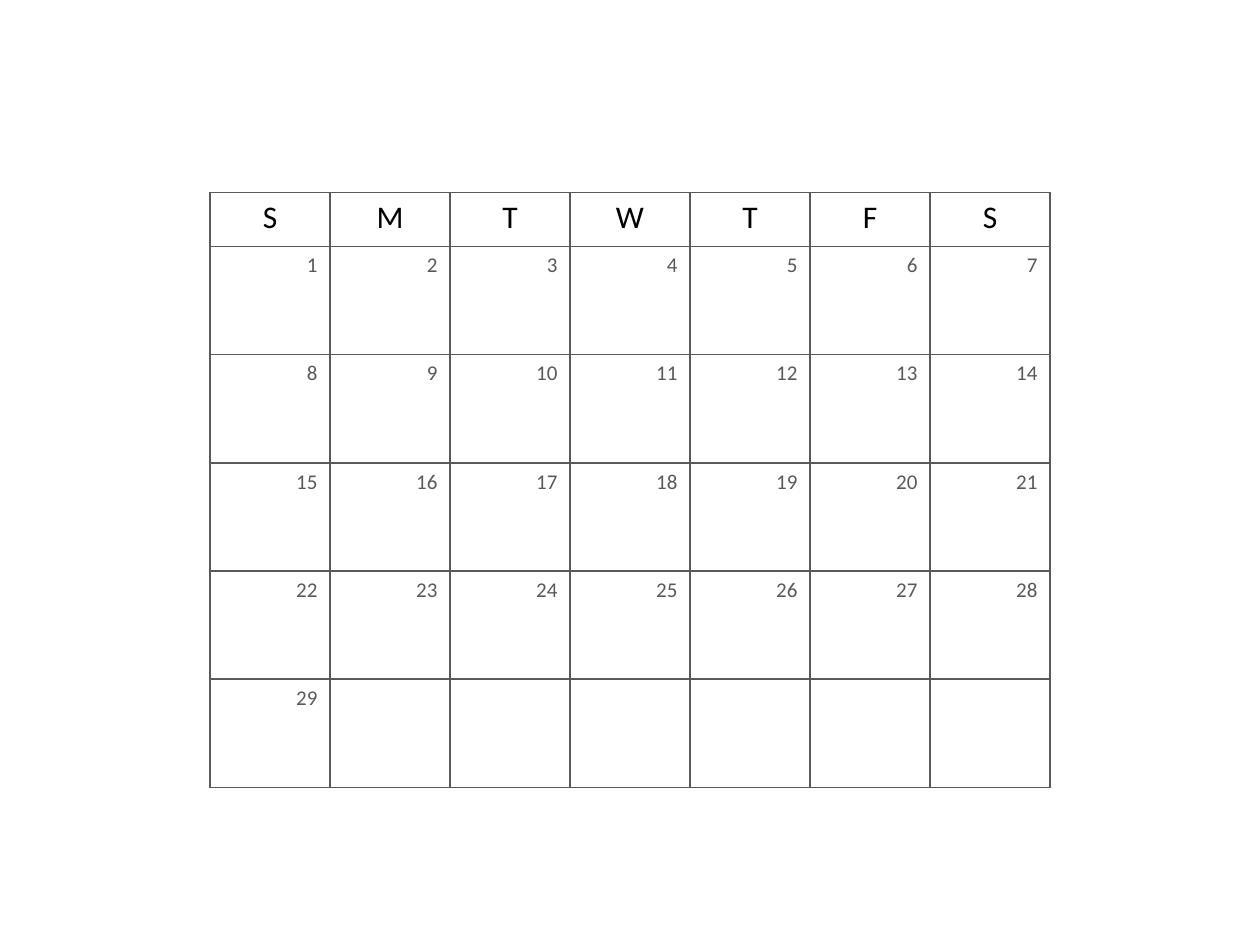
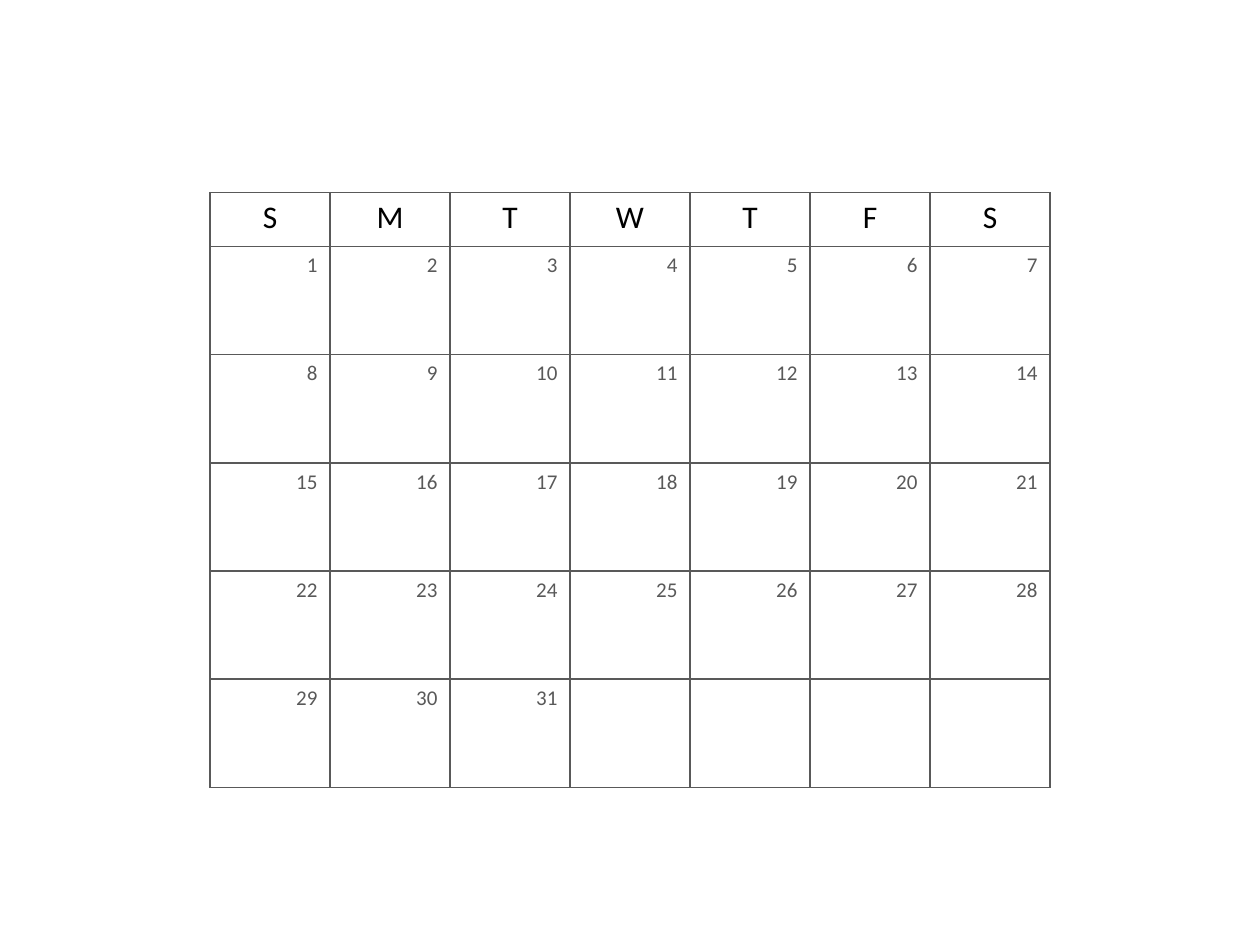
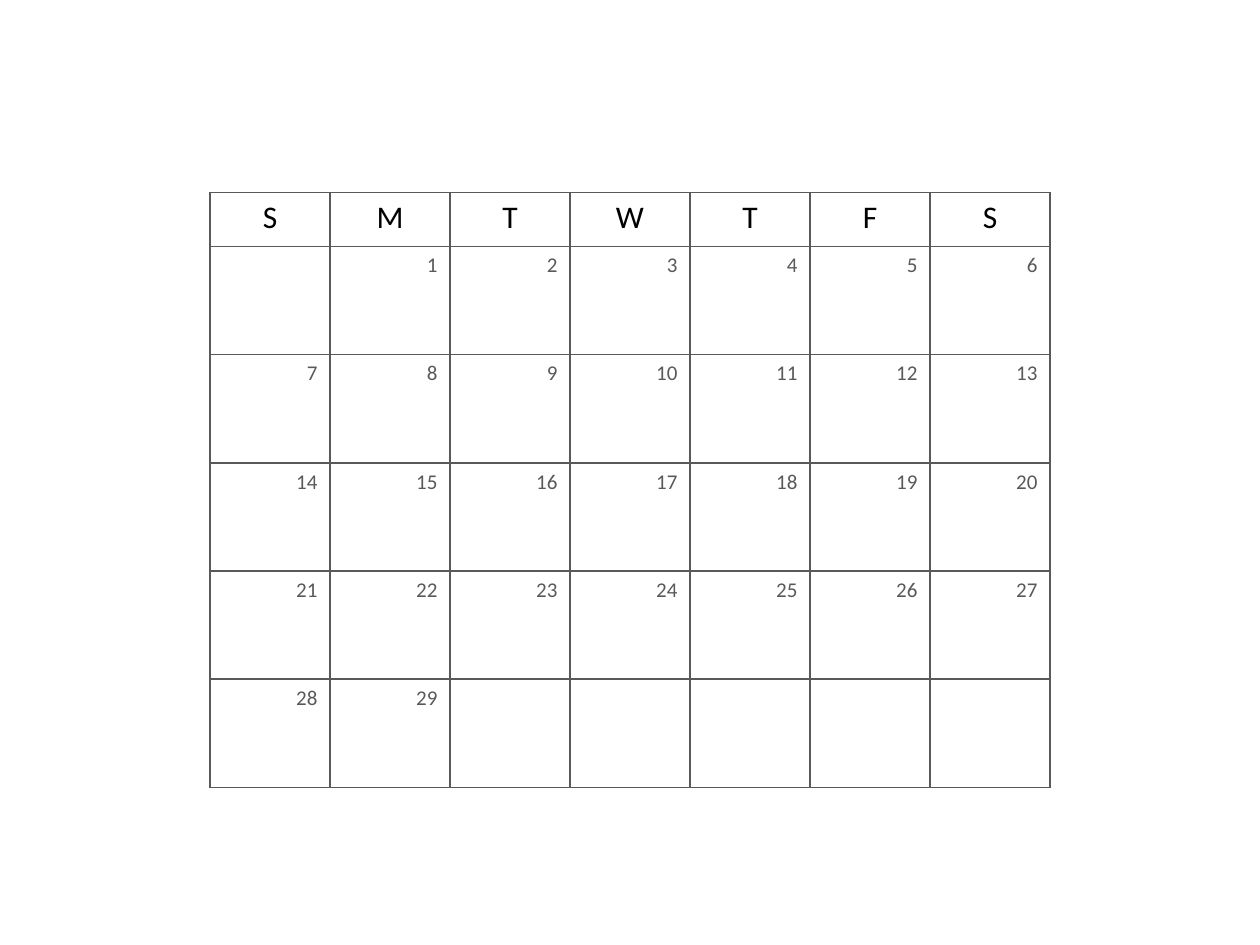
from lxml import etree
from pptx import Presentation
from pptx.dml.color import RGBColor
from pptx.enum.text import MSO_ANCHOR, PP_ALIGN
from pptx.oxml.ns import qn
from pptx.util import Pt

CENTER, RIGHT = PP_ALIGN.CENTER, PP_ALIGN.RIGHT
TOP = MSO_ANCHOR.TOP

# Shared style
FONT = "Calibri"
BLACK, GRAY = "000000", "595959"
HEADER = {"size": Pt(18), "name": FONT, "bold": False}
DAY = {"size": Pt(12), "name": FONT, "bold": False}

# Calendar grid: each week is twice as tall as the header
WEEKDAYS = "SMTWTFS"
WEEKS = 5
LEFT, TABLE_TOP, WIDTH, HEIGHT = Pt(120), Pt(110), Pt(480), Pt(340)
HEADER_H = HEIGHT // (2 * WEEKS + 1)

# Column of day 1 and number of days, one pair per slide
MONTHS = [(0, 29), (0, 31), (1, 29)]


def rgb(color):
    return RGBColor.from_string(color)


class Deck:
    def __init__(self):
        self.prs = Presentation()
        self.prs.slide_width, self.prs.slide_height = Pt(720), Pt(540)
        self.s = None

    def slide(self):
        self.s = self.prs.slides.add_slide(self.prs.slide_layouts[6])

    def borders(self, cell, color=GRAY, width=Pt(1)):
        tcPr = cell._tc.get_or_add_tcPr()
        for side in ("a:lnL", "a:lnR", "a:lnT", "a:lnB"):
            ln = etree.SubElement(tcPr, qn(side), w=str(width))
            fill = etree.SubElement(ln, qn("a:solidFill"))
            etree.SubElement(fill, qn("a:srgbClr"), val=color)

    def text(self, cell, text, fmt, color, align):
        p = cell.text_frame.paragraphs[0]
        p.alignment = align
        r = p.add_run()
        r.text = text
        for name, value in fmt.items():
            setattr(r.font, name, value)
        r.font.color.rgb = rgb(color)

    def calendar(self, first_column, days):
        table = self.s.shapes.add_table(
            WEEKS + 1, len(WEEKDAYS), LEFT, TABLE_TOP, WIDTH, HEIGHT).table
        table.first_row = table.horz_banding = False
        for i, row in enumerate(table.rows):
            row.height = 2 * HEADER_H if i else HEADER_H
        for cell in table.iter_cells():
            self.borders(cell)
            cell.fill.background()
            cell.vertical_anchor = TOP

        # Weekday initials, then the numbered days
        for col, initial in enumerate(WEEKDAYS):
            self.text(table.cell(0, col), initial, HEADER, BLACK, CENTER)
        for day in range(1, days + 1):
            week, col = divmod(first_column + day - 1, len(WEEKDAYS))
            self.text(table.cell(week + 1, col), str(day), DAY, GRAY, RIGHT)


def main():
    deck = Deck()
    for first_column, days in MONTHS:
        deck.slide()
        deck.calendar(first_column, days)
    deck.prs.save("out.pptx")


if __name__ == "__main__":
    main()
